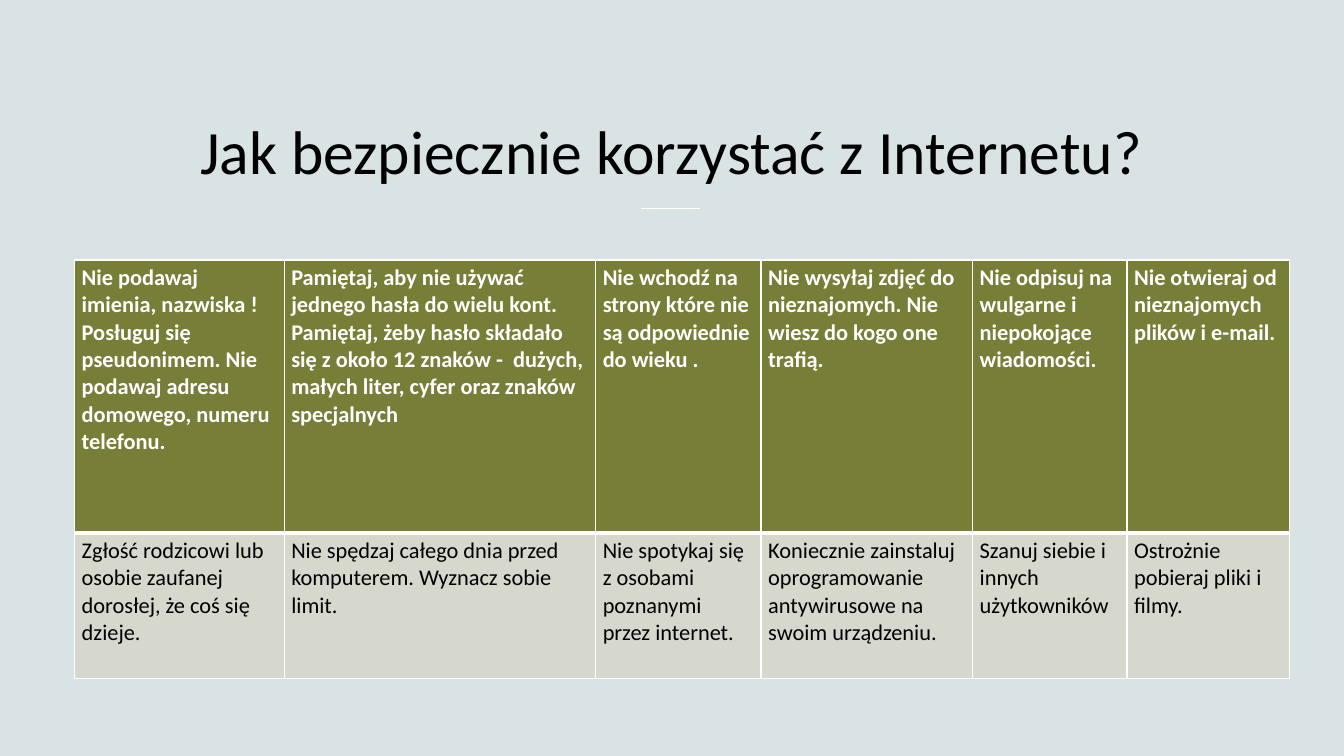
import pptx
import pptx.dml.color
import pptx.enum.shapes
import pptx.enum.text
import pptx.oxml.ns
import pptx.util
from lxml import etree

Cm = pptx.util.Cm
Pt = pptx.util.Pt

HEAD = [
    "Nie podawaj imienia, nazwiska !\nPosługuj się pseudonimem. Nie podawaj adresu domowego, numeru telefonu.",
    "Pamiętaj, aby nie używać jednego hasła do wielu kont. Pamiętaj, żeby hasło składało się "
    "z około 12 znaków -  dużych, małych liter, cyfer oraz znaków specjalnych",
    "Nie wchodź na strony które nie są odpowiednie do wieku .",
    "Nie wysyłaj zdjęć do nieznajomych. Nie wiesz do kogo one trafią.",
    "Nie odpisuj na wulgarne i niepokojące wiadomości.",
    "Nie otwieraj od nieznajomych plików i e-mail.",
]
BODY = [
    "Zgłość rodzicowi lub osobie zaufanej dorosłej, że coś się dzieje.",
    "Nie spędzaj całego dnia przed komputerem. Wyznacz sobie limit.",
    "Nie spotykaj się z osobami poznanymi przez internet.",
    "Koniecznie zainstaluj oprogramowanie antywirusowe na swoim urządzeniu.",
    "Szanuj siebie i innych użytkowników",
    "Ostrożnie pobieraj pliki i filmy.",
]


def color(code):
    return pptx.dml.color.RGBColor.from_string(code)


class Deck:
    """Draws styled elements on the current slide."""

    font = "Calibri"
    back, dark, light = "DAE3E3", "767E37", "D6D8CE"
    black, white = "000000", "FFFFFF"

    def __init__(self, show):
        self.slide = show.slides.add_slide(show.slide_layouts[6])
        fill = self.slide.background.fill
        fill.solid()
        fill.fore_color.rgb = color(self.back)

    def style(self, frame, size, ink, bold=False):
        for par in frame.paragraphs:
            for run in par.runs:
                run.font.name = self.font
                run.font.size = Pt(size)
                run.font.bold = bold
                run.font.color.rgb = color(ink)

    def title(self, text, left, top, width, height):
        box = self.slide.shapes.add_textbox(Cm(left), Cm(top), Cm(width), Cm(height))
        frame = box.text_frame
        frame.word_wrap = True
        frame.vertical_anchor = pptx.enum.text.MSO_ANCHOR.MIDDLE
        frame.text = text
        par = frame.paragraphs[0]
        par.alignment = pptx.enum.text.PP_ALIGN.CENTER
        par.line_spacing = 0.9
        self.style(frame, 44, self.black)

    def rule(self, left, right, top):
        line = self.slide.shapes.add_connector(
            pptx.enum.shapes.MSO_CONNECTOR.STRAIGHT, Cm(left), Cm(top), Cm(right), Cm(top))
        line.line.color.rgb = color(self.white)
        line.line.width = Pt(1)
        etree.SubElement(line._element.spPr, pptx.oxml.ns.qn("a:effectLst"))

    def border(self, cell, side, width):
        edge = etree.SubElement(cell._tc.get_or_add_tcPr(), pptx.oxml.ns.qn("a:ln" + side), w=str(Pt(width)))
        fill = etree.SubElement(edge, pptx.oxml.ns.qn("a:solidFill"))
        etree.SubElement(fill, pptx.oxml.ns.qn("a:srgbClr"), val=self.white)

    def cell(self, cell, text, first):
        cell.text_frame.text = text
        cell.margin_left = cell.margin_right = Cm(0.18)
        cell.margin_top = cell.margin_bottom = Cm(0.1)
        thick = "B" if first else "T"
        for side in "LRTB":
            self.border(cell, side, 3 if side == thick else 1)
        cell.fill.solid()
        cell.fill.fore_color.rgb = color(self.dark if first else self.light)
        self.style(cell.text_frame, 16, self.white if first else self.black, first)

    def table(self, data, left, top, cols, rows):
        grid = self.slide.shapes.add_table(
            len(rows), len(cols), Cm(left), Cm(top), Cm(sum(cols)), Cm(sum(rows))).table
        for col, width in zip(grid.columns, cols):
            col.width = Cm(width)
        for r, (texts, height) in enumerate(zip(data, rows)):
            grid.rows[r].height = Cm(height)
            for c, text in enumerate(texts):
                self.cell(grid.cell(r, c), text, r == 0)


def main():
    show = pptx.Presentation()
    show.slide_width, show.slide_height = Cm(33.87), Cm(19.05)
    deck = Deck(show)
    deck.title("Jak bezpiecznie korzystać z Internetu?", 2.74, 2.82, 28.37, 2.14)
    deck.rule(16.15, 17.65, 5.26)
    deck.table([HEAD, BODY], 1.88, 6.55, [5.28, 7.85, 4.17, 5.33, 3.89, 4.09], [6.88, 3.66])
    show.save("out.pptx")


if __name__ == "__main__":
    main()
